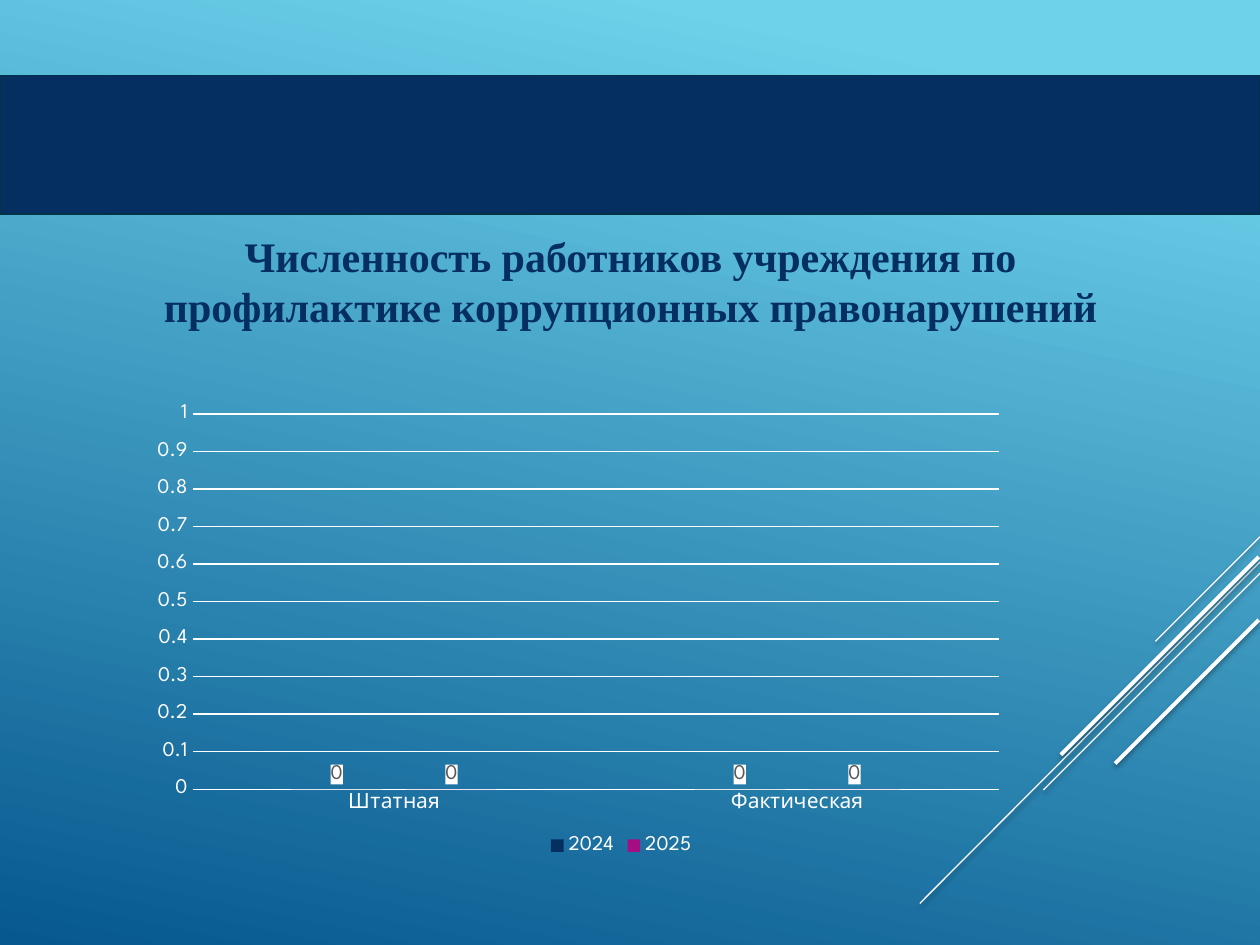
from dataclasses import dataclass

from lxml import etree
from pptx import Presentation
from pptx.chart.data import CategoryChartData
from pptx.dml.color import RGBColor
from pptx.enum.chart import XL_CHART_TYPE, XL_LABEL_POSITION, XL_LEGEND_POSITION, XL_TICK_MARK
from pptx.enum.shapes import MSO_CONNECTOR, MSO_SHAPE
from pptx.enum.text import MSO_ANCHOR, MSO_AUTO_SIZE, PP_ALIGN
from pptx.oxml import parse_xml
from pptx.oxml.ns import nsdecls, qn
from pptx.util import Inches, Pt

COLUMNS = XL_CHART_TYPE.COLUMN_CLUSTERED
LABEL_ABOVE = XL_LABEL_POSITION.OUTSIDE_END
LEGEND_BOTTOM = XL_LEGEND_POSITION.BOTTOM
NO_TICK = XL_TICK_MARK.NONE
STRAIGHT = MSO_CONNECTOR.STRAIGHT
PROCESS = MSO_SHAPE.FLOWCHART_PROCESS
TITLE_ONLY = 5


@dataclass(frozen=True)
class Theme:
    """Colours, fonts and type sizes of the slide."""
    navy: str = "052F61"
    band_edge: str = "043148"
    magenta: str = "A50E82"
    white: str = "FFFFFF"
    label_gray: str = "595959"
    sky: str = "6ED2EB"
    deep_blue: str = "06588E"
    title_font: str = "Times New Roman"
    chart_font: str = "League Spartan"
    title_size: int = 24
    chart_size: int = 12


THEME = Theme()
DECOR_LINES = (
    (10, 4.26, 9.17, 5.09, 0.75),
    (10, 4.46, 7.3, 7.17, 0.75),
    (10, 4.55, 8.28, 6.27, 0.75),
    (9.99, 4.42, 8.42, 5.99, 2.25),
    (9.99, 4.92, 8.85, 6.06, 2.25),
)
SHADOW = (
    f'<a:effectLst {nsdecls("a")}><a:outerShdw blurRad="39370" dist="20320" dir="5400000">'
    '<a:srgbClr val="000000"><a:alpha val="38000"/></a:srgbClr></a:outerShdw></a:effectLst>'
)


def rgb(value):
    """Turn a hex string into a colour."""
    return RGBColor.from_string(value)


def style_font(font, color, size=THEME.chart_size, name=THEME.chart_font, bold=False):
    """Apply a type style to a font."""
    for attribute, value in {"size": Pt(size), "name": name, "bold": bold}.items():
        setattr(font, attribute, value)
    font.color.rgb = rgb(color)


def style_line(line, color, width):
    """Give a line its colour and width."""
    line.color.rgb = rgb(color)
    line.width = Pt(width)


def paint_background(slide):
    """Fill the slide with the blue gradient."""
    fill = slide.background.fill
    fill.gradient()
    fill.gradient_angle = 360 - 102
    for stop, color, position in zip(fill.gradient_stops, (THEME.sky, THEME.deep_blue), (0.1, 1)):
        stop.color.rgb = rgb(color)
        stop.position = position


def add_decor(slide):
    """Draw the diagonal lines at the right edge."""
    for *ends, width in DECOR_LINES:
        connector = slide.shapes.add_connector(STRAIGHT, *map(Inches, ends))
        style_line(connector.line, THEME.white, width)
        connector._element.spPr.append(parse_xml(SHADOW))


def add_band(slide, box):
    """Draw the dark band across the slide."""
    shape = slide.shapes.add_shape(PROCESS, *map(Inches, box))
    shape.shadow.inherit = False
    shape.fill.solid()
    shape.fill.fore_color.rgb = rgb(THEME.navy)
    style_line(shape.line, THEME.band_edge, 1)


def place_title(slide, box, text):
    """Move, fill and format the title placeholder."""
    title = slide.shapes.title
    for side, value in zip(("left", "top", "width", "height"), box):
        setattr(title, side, Inches(value))
    frame = title.text_frame
    frame.text = text
    settings = {
        "word_wrap": True,
        "auto_size": MSO_AUTO_SIZE.SHAPE_TO_FIT_TEXT,
        "vertical_anchor": MSO_ANCHOR.TOP,
    }
    for attribute, value in settings.items():
        setattr(frame, attribute, value)
    paragraph = frame.paragraphs[0]
    paragraph.alignment = PP_ALIGN.CENTER
    style_font(paragraph.runs[0].font, THEME.navy, THEME.title_size, THEME.title_font, True)


def set_plot_layout(chart, x, y, w, h):
    """Fix the inner plot area as fractions of the chart."""
    area = chart._chartSpace.find(".//" + qn("c:plotArea"))
    for old in area.findall(qn("c:layout")):
        area.remove(old)
    layout = etree.Element(qn("c:layout"))
    manual = etree.SubElement(layout, qn("c:manualLayout"))
    values = {"layoutTarget": "inner", "xMode": "edge", "yMode": "edge", "x": x, "y": y, "w": w, "h": h}
    for tag, value in values.items():
        etree.SubElement(manual, qn(f"c:{tag}")).set("val", str(value))
    area.insert(0, layout)


def style_axes(chart):
    """Format both axes and the gridlines."""
    for axis in (chart.category_axis, chart.value_axis):
        axis.major_tick_mark = NO_TICK
        axis.minor_tick_mark = NO_TICK
        style_font(axis.tick_labels.font, THEME.white)
    style_line(chart.category_axis.format.line, THEME.white, 0.75)
    value_axis = chart.value_axis
    scale = {"minimum_scale": 0, "maximum_scale": 1, "major_unit": 0.1, "has_major_gridlines": True}
    for attribute, value in scale.items():
        setattr(value_axis, attribute, value)
    value_axis.format.line.fill.background()
    style_line(value_axis.major_gridlines.format.line, THEME.white, 0.75)


def style_series(series, color):
    """Colour a series and show its values on white boxes."""
    series.format.fill.solid()
    series.format.fill.fore_color.rgb = rgb(color)
    labels = series.data_labels
    labels.show_value = True
    labels.position = LABEL_ABOVE
    style_font(labels.font, THEME.label_gray)
    box = parse_xml(
        f'<c:spPr {nsdecls("c", "a")}><a:solidFill><a:srgbClr val="{THEME.white}"/>'
        "</a:solidFill></c:spPr>"
    )
    labels._element.find(qn("c:txPr")).addprevious(box)


def add_staff_chart(slide, box):
    """Add the column chart of planned and actual staff."""
    data = CategoryChartData(number_format="General")
    data.categories = ["Штатная", "Фактическая"]
    for year in ("2024", "2025"):
        data.add_series(year, (0, 0))
    chart = slide.shapes.add_chart(COLUMNS, *map(Inches, box), data).chart
    chart.has_title = False
    style_font(chart.font, THEME.white, 10)
    chart.has_legend = True
    chart.legend.position = LEGEND_BOTTOM
    chart.legend.include_in_layout = False
    style_font(chart.legend.font, THEME.white)
    style_axes(chart)
    plot = chart.plots[0]
    for attribute, value in {"gap_width": 219, "overlap": -27, "vary_by_categories": False}.items():
        setattr(plot, attribute, value)
    for series, color in zip(plot.series, (THEME.navy, THEME.magenta)):
        style_series(series, color)
    set_plot_layout(chart, 0.08, 0.06, 0.79, 0.79)


def main():
    """Build and save the presentation."""
    presentation = Presentation()
    presentation.slide_width = Inches(10)
    presentation.slide_height = Inches(7.5)
    slide = presentation.slides.add_slide(presentation.slide_layouts[TITLE_ONLY])
    paint_background(slide)
    add_decor(slide)
    add_band(slide, (0, 0.6, 10, 1.1))
    place_title(
        slide, (0.82, 1.78, 8.37, 0.9),
        "Численность работников учреждения по профилактике коррупционных правонарушений",
    )
    add_staff_chart(slide, (0.88, 3.06, 8.1, 3.77))
    presentation.save("out.pptx")


if __name__ == "__main__":
    main()
